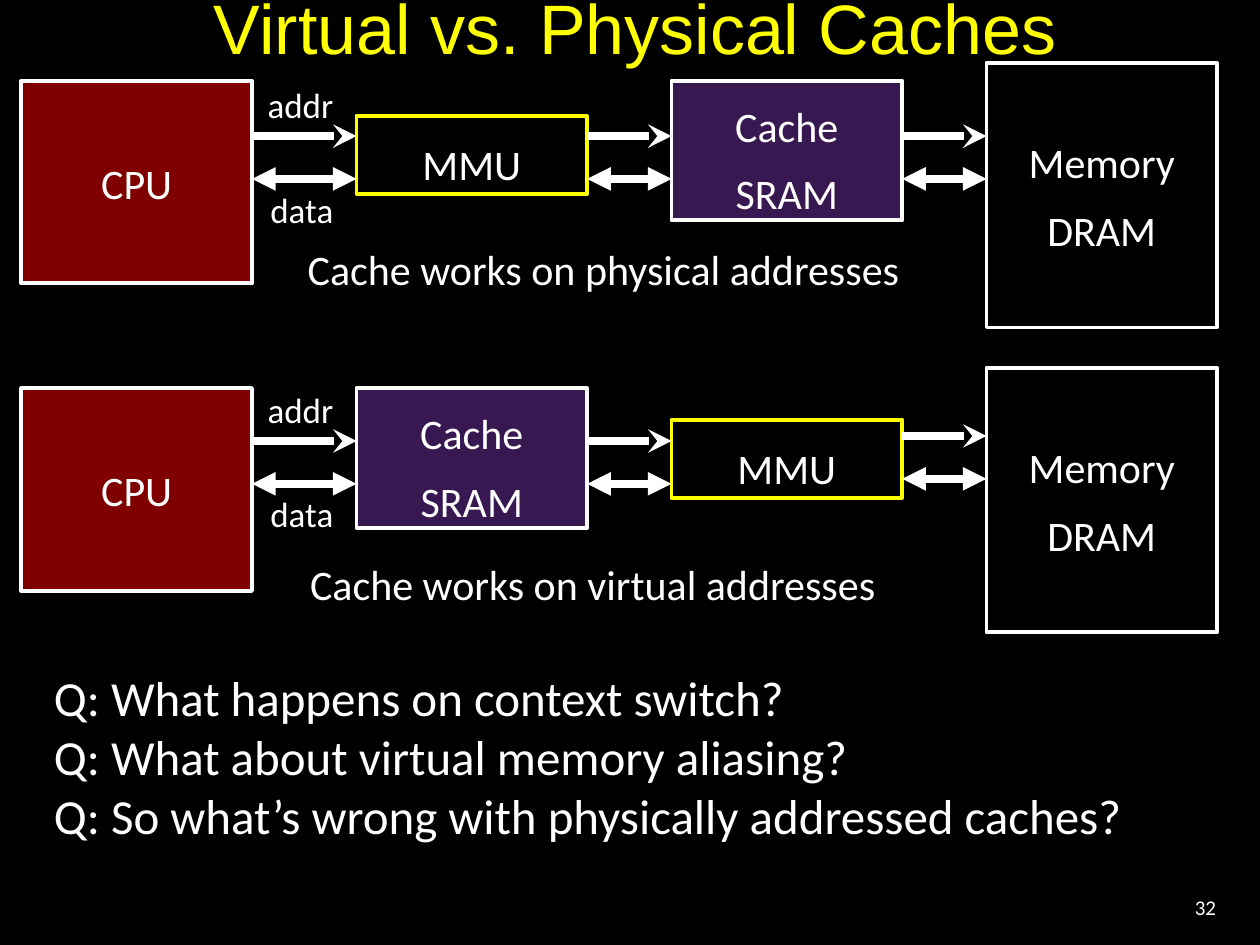
import pptx
import pptx.util
import pptx.dml.color
import pptx.enum.shapes
import pptx.enum.text
import lxml.etree

Inches, Pt = pptx.util.Inches, pptx.util.Pt
Align = pptx.enum.text.PP_ALIGN
Anchor = pptx.enum.text.MSO_ANCHOR
WHITE, YELLOW, RED, PURPLE = "FFFFFF", "FFFF00", "800000", "381850"


def color(code):
    return pptx.dml.color.RGBColor.from_string(code)


class Board:
    """Holds the text style and the slide being drawn."""

    style = {"name": "Calibri", "size": Pt(24), "bold": False}

    def __init__(self, slide):
        self.slide = slide
        fill = slide.background.fill
        fill.solid()
        fill.fore_color.rgb = color("000000")

    def label(self, shape, lines, align=Align.CENTER, space=1.34,
              tint=WHITE, frame=None, **font):
        for key, value in (frame or {}).items():
            setattr(shape.text_frame, key, value)
        shape.text_frame.text = "\n".join(lines)
        for para in shape.text_frame.paragraphs:
            para.alignment = align
            para.line_spacing = space
            run = para.runs[0]
            for key, value in {**self.style, **font}.items():
                setattr(run.font, key, value)
            run.font.color.rgb = color(tint)

    def title(self, text, left, top, width, height):
        shape = self.slide.shapes.title
        places = {"left": left, "top": top, "width": width, "height": height}
        for key, value in places.items():
            setattr(shape, key, Inches(value))
        frame = {"vertical_anchor": Anchor.MIDDLE, "word_wrap": True,
                 "auto_size": pptx.enum.text.MSO_AUTO_SIZE.NONE}
        self.label(shape, [text], space=1, tint=YELLOW, frame=frame,
                   name="Arial", size=Pt(40))

    def text(self, lines, left, top, width, height, wrap=False,
             anchor=Anchor.TOP, **look):
        shape = self.slide.shapes.add_textbox(
            *map(Inches, (left, top, width, height)))
        frame = {"word_wrap": wrap, "vertical_anchor": anchor}
        self.label(shape, lines, frame=frame, **look)

    def box(self, lines, left, top, height, fill=None, edge=WHITE, lift=0):
        """Draw a unit; lift is extra room below its text."""
        shape = self.slide.shapes.add_shape(
            pptx.enum.shapes.MSO_SHAPE.RECTANGLE,
            *map(Inches, (left, top, WIDE, height)))
        shape.shadow.inherit = False
        if fill:
            shape.fill.solid()
            shape.fill.fore_color.rgb = color(fill)
        else:
            shape.fill.background()
        shape.line.color.rgb = color(edge)
        shape.line.width = Pt(2.25)
        frame = {"vertical_anchor": Anchor.MIDDLE, "word_wrap": True,
                 "margin_bottom": Inches(0.05 + lift)}
        self.label(shape, lines, frame=frame)

    def arrow(self, start, end, y, **heads):
        line = self.slide.shapes.add_connector(
            pptx.enum.shapes.MSO_CONNECTOR.STRAIGHT,
            *map(Inches, (start, y, end, y)))
        line.line.color.rgb = color(WHITE)
        line.line.width = Pt(4.5)
        space = "{http://schemas.openxmlformats.org/drawingml/2006/main}"
        props = line._element.spPr
        stroke = props.find(space + "ln")
        for tag, kind in heads.items():
            lxml.etree.SubElement(stroke, space + tag, type=kind)
        lxml.etree.SubElement(props, space + "effectLst")


WIDE = 1.83
COLS = [0.17, 2.83, 5.33, 7.83]
# name: lines, height, fill, edge, lift
UNITS = {
    "cpu": (["CPU"], 1.61, RED, WHITE, 0.13),
    "mmu": (["MMU"], 0.62, None, YELLOW, 0),
    "cache": (["Cache", "SRAM"], 1.11, PURPLE, WHITE, 0),
    "mem": (["Memory", "DRAM"], 2.1, None, WHITE, 0.13),
}
# per chain: top, units with their tops, link heights, note with its place
CHAINS = [
    (0.5, {"cpu": 0.64, "mmu": 0.92, "cache": 0.64, "mem": 0.5},
     [1.08, 1.08, 1.08],
     ("Cache works on physical addresses", 2.32, 1.75, 4.94)),
    (2.92, {"cpu": 3.08, "cache": 3.08, "mmu": 3.33, "mem": 2.92},
     [3.5, 3.5, 3.46],
     ("Cache works on virtual addresses", 2.34, 4.25, 4.73)),
]


def chain(board, top, units, links, note):
    """Draw one row of units, the links between them and its note."""
    for left, (name, y) in zip(COLS, units.items()):
        lines, height, fill, edge, lift = UNITS[name]
        board.box(lines, left, y, height, fill, edge, lift)
    for left, right, y in zip(COLS, COLS[1:], links):
        board.arrow(left + WIDE, right, y, tailEnd="stealth")
        board.arrow(left + WIDE, right, y + 0.34,
                    headEnd="triangle", tailEnd="triangle")
    board.text(["addr"], 2.02, top, 0.73, 0.51, size=Pt(20))
    board.text(["data"], 2.04, top + 0.83, 0.71, 0.51, size=Pt(20))
    words, left, y, width = note
    board.text([words], left, y, width, 0.6)


def main():
    deck = pptx.Presentation()
    deck.slide_width, deck.slide_height = Inches(10), Inches(7.5)
    board = Board(deck.slides.add_slide(deck.slide_layouts[5]))
    board.title("Virtual vs. Physical Caches", 0.25, 0, 9.58, 0.42)
    for row in CHAINS:
        chain(board, *row)
    board.text(["Q: What happens on context switch?",
                "Q: What about virtual memory aliasing?",
                "Q: So what’s wrong with physically addressed caches?"],
               0.33, 5.25, 8.92, 1.51, wrap=True, align=Align.LEFT,
               space=1, size=Pt(28))
    board.text(["32"], 8.92, 7, 0.83, 0.4, wrap=True, anchor=Anchor.MIDDLE,
               align=Align.RIGHT, space=1, size=Pt(12))
    deck.save("out.pptx")


if __name__ == "__main__":
    main()
